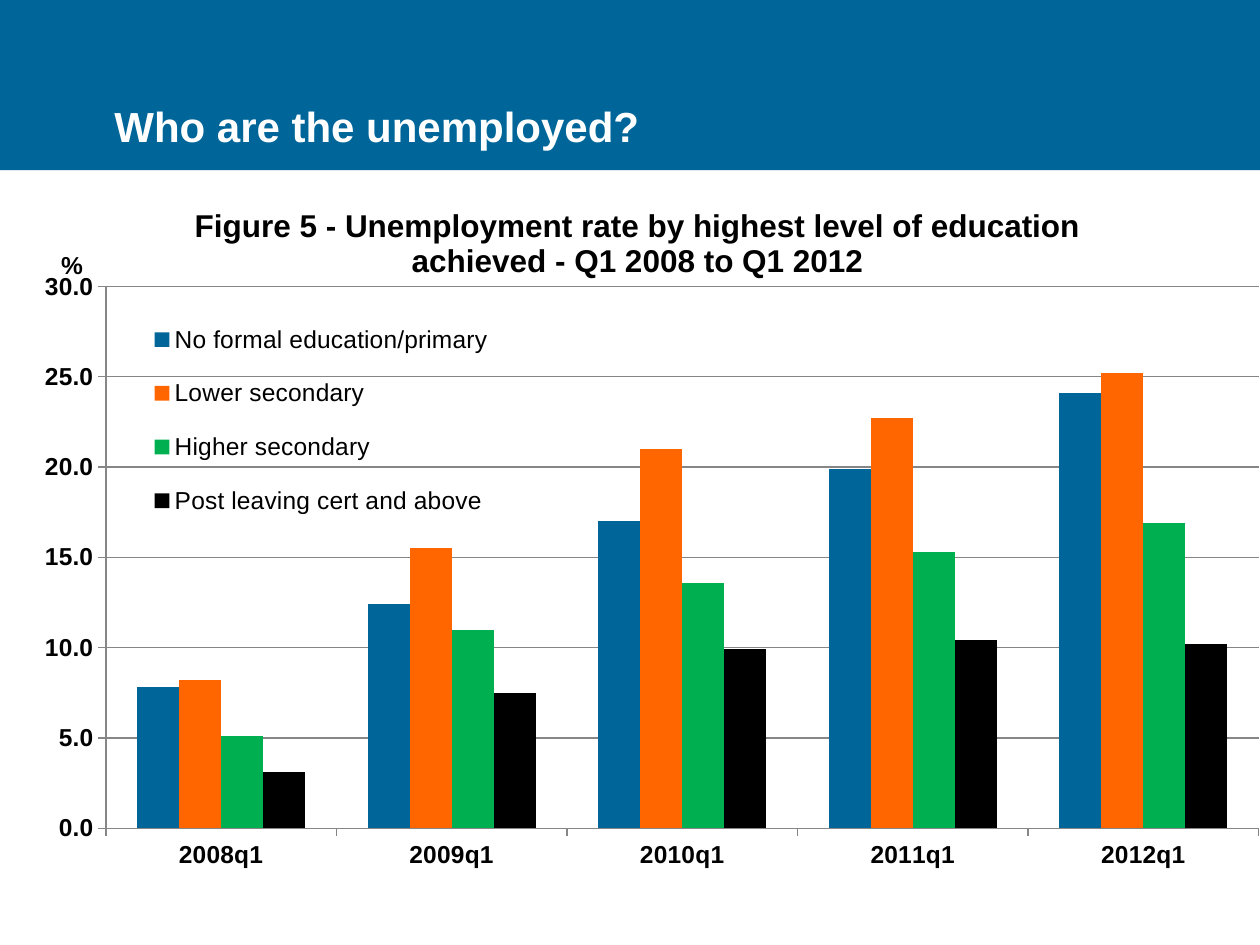
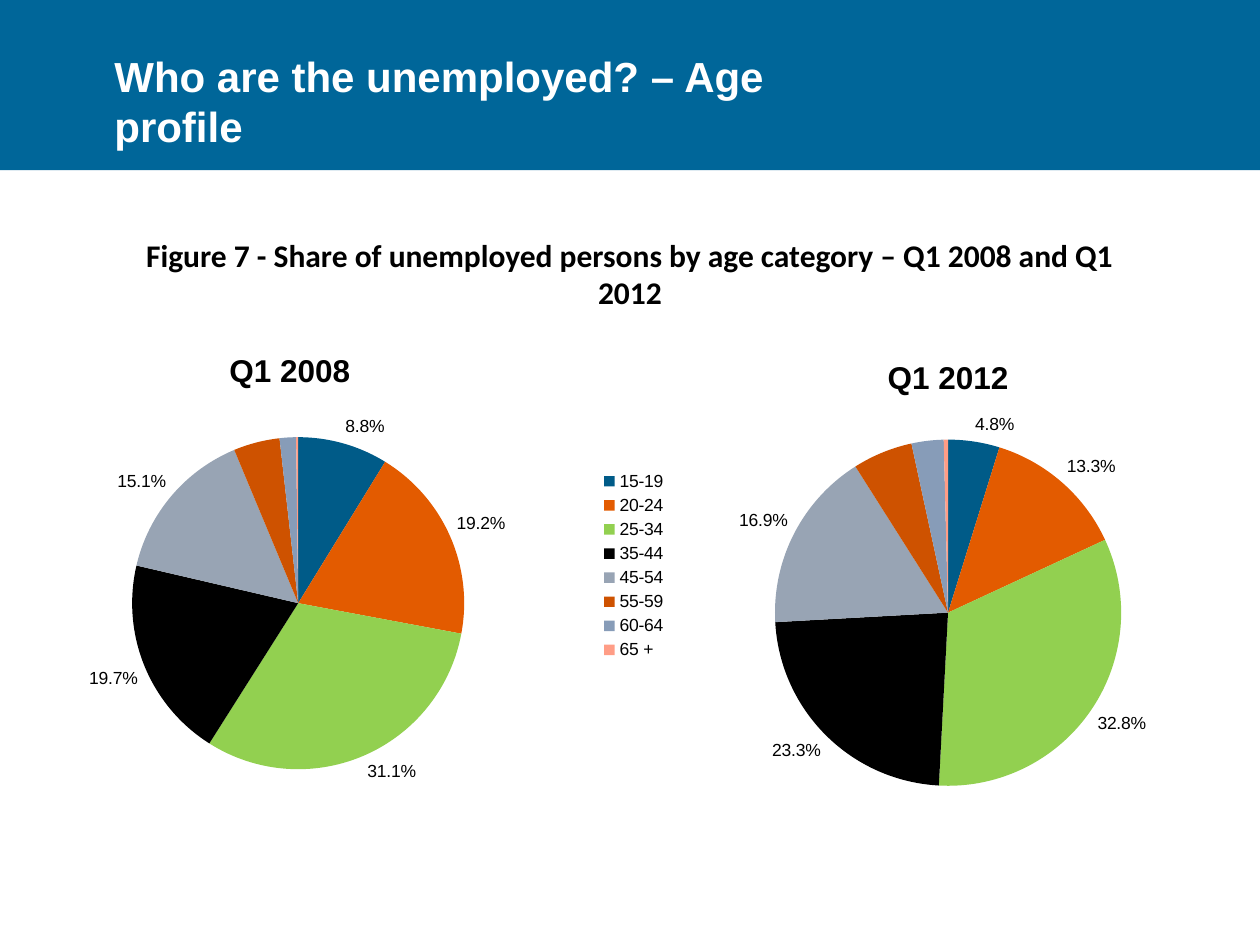
from dataclasses import dataclass

from lxml import etree
from pptx import Presentation
from pptx.chart.data import CategoryChartData
from pptx.dml.color import RGBColor
from pptx.enum.chart import XL_CHART_TYPE, XL_LABEL_POSITION, XL_LEGEND_POSITION, XL_TICK_MARK
from pptx.enum.shapes import MSO_SHAPE
from pptx.enum.text import MSO_ANCHOR, PP_ALIGN
from pptx.oxml.ns import qn
from pptx.util import Inches, Pt

COLUMN, PIE = XL_CHART_TYPE.COLUMN_CLUSTERED, XL_CHART_TYPE.PIE
LABEL_OUTSIDE = XL_LABEL_POSITION.OUTSIDE_END
LEGEND_RIGHT = XL_LEGEND_POSITION.RIGHT
TICK_OUTSIDE = XL_TICK_MARK.OUTSIDE
RECTANGLE = MSO_SHAPE.RECTANGLE
BOTTOM, TOP = MSO_ANCHOR.BOTTOM, MSO_ANCHOR.TOP
LEFT, CENTER = PP_ALIGN.LEFT, PP_ALIGN.CENTER
WIDTH, HEIGHT = 10, 7.5


@dataclass(frozen=True)
class Theme:
    """Colours, fonts and type sizes shared by the slides."""
    band: str = "006699"
    title: str = "FFFFFF"
    ink: str = "000000"
    grid: str = "868686"
    columns: tuple = ("006699", "FF6600", "00B050", "000000")
    slices: tuple = ("005B88", "E35B00", "92D050", "000000",
                     "98A4B4", "CE5200", "879CB8", "FF9D86")
    font: str = "Arial"
    caption_font: str = "Calibri"
    title_size: int = 24
    caption_size: int = 18
    axis_size: int = 14
    label_size: int = 10


THEME = Theme()

QUARTERS = ["2008q1", "2009q1", "2010q1", "2011q1", "2012q1"]
EDUCATION_RATES = {
    "No formal education/primary": (7.8, 12.4, 17, 19.9, 24.1),
    "Lower secondary": (8.2, 15.5, 21, 22.7, 25.2),
    "Higher secondary": (5.1, 11, 13.6, 15.3, 16.9),
    "Post leaving cert and above": (3.1, 7.5, 9.9, 10.4, 10.2),
}
AGES = ["15-19", "20-24", "25-34", "35-44", "45-54", "55-59", "60-64", "65 +"]
SHARES_2008 = (0.088, 0.192, 0.311, 0.197, 0.151, 0.045, 0.016, 0.002)
SHARES_2012 = (0.048, 0.133, 0.328, 0.233, 0.169, 0.056, 0.03, 0.004)
UNLABELLED_AGES = (5, 6, 7)


def style_font(font, size, color=THEME.ink, bold=False, name=THEME.font):
    """Set the look of a font."""
    font.name, font.size, font.bold = name, Pt(size), bold
    font.color.rgb = RGBColor.from_string(color)


def paint(fill, color):
    """Fill with one plain colour."""
    fill.solid()
    fill.fore_color.rgb = RGBColor.from_string(color)


def add_text(slide, box, text, size, color, name, anchor=TOP, alignment=LEFT):
    """Add a bold wrapped text box."""
    shape = slide.shapes.add_textbox(*map(Inches, box))
    frame = shape.text_frame
    frame.word_wrap = True
    frame.vertical_anchor = anchor
    paragraph = frame.paragraphs[0]
    paragraph.text = text
    paragraph.alignment = alignment
    style_font(paragraph.font, size, color, True, name)


def add_header(slide, title):
    """Draw the blue band and the slide title."""
    band = slide.shapes.add_shape(RECTANGLE, 0, 0, Inches(WIDTH), Inches(0.18 * HEIGHT))
    band.shadow.inherit = False
    paint(band.fill, THEME.band)
    band.line.fill.background()
    add_text(slide, (0.81, 0, 5.46, 1.25), title, THEME.title_size,
             THEME.title, THEME.font, BOTTOM)


def place(element, **shares):
    """Give a chart part a fixed place, in shares of the chart."""
    for old in element.findall(qn("c:layout")):
        element.remove(old)
    layout = etree.Element(qn("c:layout"))
    manual = etree.SubElement(layout, qn("c:manualLayout"))
    if element.tag == qn("c:plotArea"):
        etree.SubElement(manual, qn("c:layoutTarget")).set("val", "inner")
    for side in "xy":
        etree.SubElement(manual, qn(f"c:{side}Mode")).set("val", "edge")
    for side, share in shares.items():
        etree.SubElement(manual, qn(f"c:{side}")).set("val", str(share))
    before = (qn("c:tx"), qn("c:legendPos"))
    position = sum(child.tag in before for child in element)
    element.insert(position, layout)


def set_title(title, text, size, x, y):
    """Write a chart or axis title at its place."""
    title.text_frame.text = text
    style_font(title.text_frame.paragraphs[0].font, size, bold=True)
    place(title.element, x=x, y=y)


def add_chart(slide, box, kind, categories, series, number_format, title, title_at, plot):
    """Add a chart with a placed title and plot area."""
    data = CategoryChartData(number_format=number_format)
    data.categories = categories
    for name, values in series.items():
        data.add_series(name, values)
    chart = slide.shapes.add_chart(kind, *map(Inches, box), data).chart
    style_font(chart.font, THEME.label_size)
    chart.has_title = True
    set_title(chart.chart_title, title, THEME.caption_size, *title_at)
    place(chart.element.xpath("c:chart/c:plotArea")[0], **dict(zip("xywh", plot)))
    return chart


def add_legend(chart, size, x, y, w, h):
    """Add a legend at its place over the chart."""
    chart.has_legend = True
    chart.legend.position = LEGEND_RIGHT
    chart.legend.include_in_layout = False
    style_font(chart.legend.font, size)
    place(chart.element.xpath("c:chart/c:legend")[0], x=x, y=y, w=w, h=h)


def add_education_chart(slide, box):
    """Draw unemployment rates by education as clustered columns."""
    chart = add_chart(
        slide, box, COLUMN, QUARTERS, EDUCATION_RATES, "0.0",
        "Figure 5 - Unemployment rate by highest level of education achieved"
        " - Q1 2008 to Q1 2012", (0.15, 0.04), (0.084, 0.153, 0.915, 0.697))
    add_legend(chart, THEME.axis_size, 0.11, 0.17, 0.29, 0.31)
    plot = chart.plots[0]
    plot.gap_width, plot.overlap, plot.vary_by_categories = 150, 0, False
    for series, color in zip(plot.series, THEME.columns):
        paint(series.format.fill, color)
        series.invert_if_negative = False
    rates = chart.value_axis
    rates.minimum_scale, rates.maximum_scale, rates.major_unit = 0, 30, 5
    rates.tick_labels.number_format = "0.0"
    rates.tick_labels.number_format_is_linked = False
    rates.has_major_gridlines = True
    set_title(rates.axis_title, "%", THEME.axis_size, 0.045, 0.1)
    rates.axis_title.element.xpath(".//a:bodyPr")[0].set("rot", "0")
    for axis in (rates, chart.category_axis):
        axis.major_tick_mark = TICK_OUTSIDE
        style_font(axis.tick_labels.font, THEME.axis_size, bold=True)
    for line in (rates.format.line, chart.category_axis.format.line,
                 rates.major_gridlines.format.line):
        line.color.rgb = RGBColor.from_string(THEME.grid)
        line.width = Pt(0.75)


def add_age_pie(slide, box, title, shares, title_at, plot_at):
    """Draw the age shares of one quarter as a pie."""
    chart = add_chart(slide, box, PIE, AGES, {title: shares}, "0.0%",
                      title, title_at, plot_at)
    chart.has_legend = False
    plot = chart.plots[0]
    for index, color in enumerate(THEME.slices):
        paint(plot.series[0].points[index].format.fill, color)
    labels = plot.series[0].data_labels
    labels.show_value, labels.show_percentage = True, False
    labels.number_format, labels.number_format_is_linked = "0.0%", False
    labels.position = LABEL_OUTSIDE
    style_font(labels.font, THEME.label_size)
    label_list = chart.element.xpath(".//c:ser/c:dLbls")[0]
    for position, index in enumerate(UNLABELLED_AGES):
        label = etree.Element(qn("c:dLbl"))
        etree.SubElement(label, qn("c:idx")).set("val", str(index))
        etree.SubElement(label, qn("c:delete")).set("val", "1")
        label_list.insert(position, label)
    return chart


def build_education_slide(slide):
    """Compose the slide on education."""
    add_header(slide, "Who are the unemployed?")
    add_education_chart(slide, (0, 1.33, WIDTH, HEIGHT - 1.33))


def build_age_slide(slide):
    """Compose the slide on age."""
    add_header(slide, "Who are the unemployed? – Age profile")
    pie_2008 = add_age_pie(slide, (0, 2.58, 5.38, 3.82), "Q1 2008", SHARES_2008,
                           (0.33, 0.04), (0.195, 0.233, 0.49, 0.69))
    add_legend(pie_2008, THEME.label_size, 0.88, 0.295, 0.11, 0.41)
    add_text(slide, (0.82, 1.82, 8.36, 0.71),
             "Figure 7 - Share of unemployed persons by age category – Q1 2008 and Q1 2012",
             THEME.caption_size, THEME.ink, THEME.caption_font, alignment=CENTER)
    add_age_pie(slide, (WIDTH / 2, 2.58, WIDTH / 2, 3.79), "Q1 2012", SHARES_2012,
                (0.4, 0.055), (0.23, 0.24, 0.55, 0.725))


def main():
    """Build and save the presentation."""
    presentation = Presentation()
    presentation.slide_width, presentation.slide_height = Inches(WIDTH), Inches(HEIGHT)
    blank = presentation.slide_layouts[6]
    for build in (build_education_slide, build_age_slide):
        build(presentation.slides.add_slide(blank))
    presentation.save("out.pptx")


if __name__ == "__main__":
    main()
